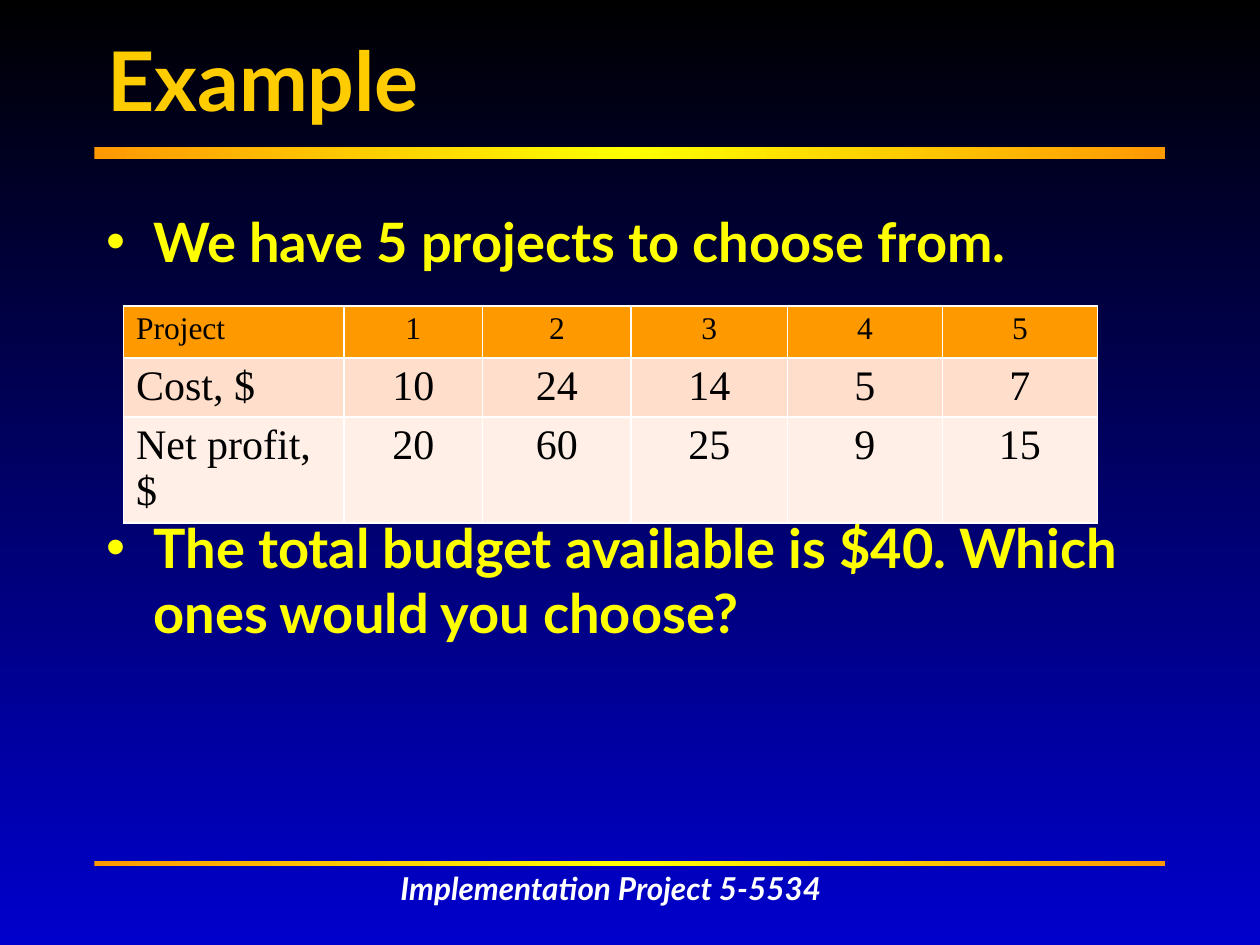
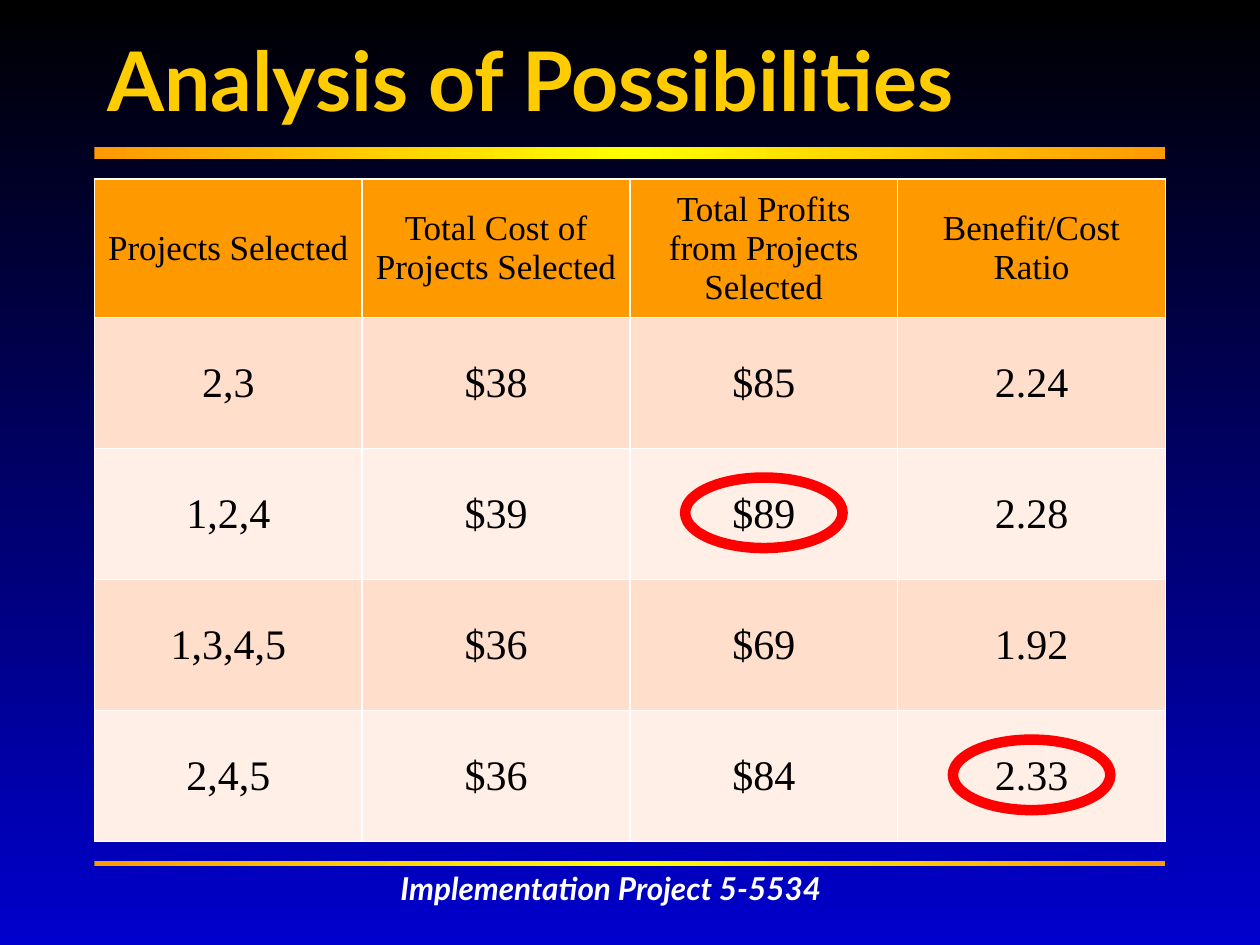
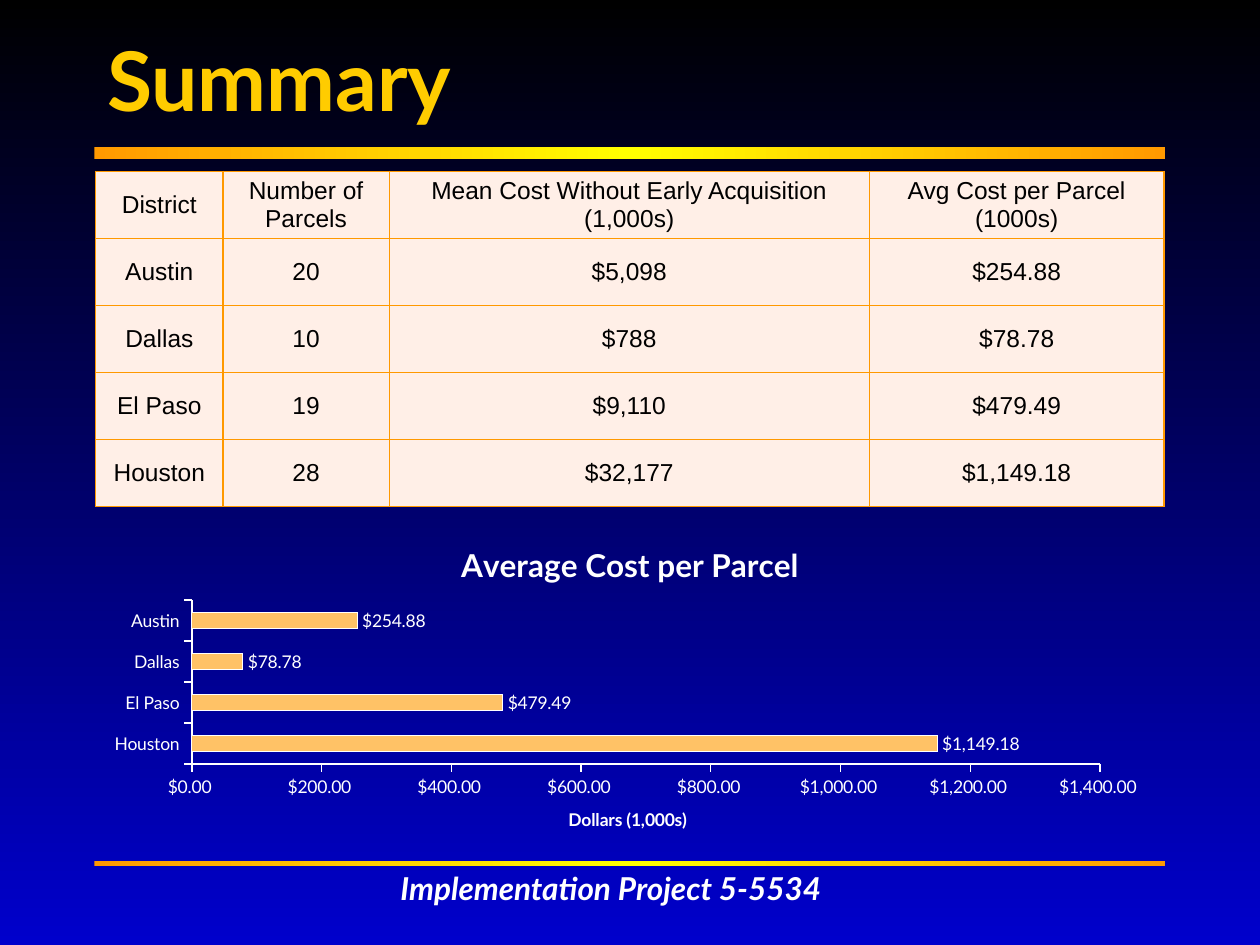
from copy import deepcopy
from dataclasses import dataclass

from lxml import etree
from pptx import Presentation
from pptx.chart.data import CategoryChartData
from pptx.dml.color import RGBColor
from pptx.enum.chart import XL_CHART_TYPE, XL_LABEL_POSITION, XL_TICK_MARK
from pptx.enum.shapes import MSO_SHAPE
from pptx.enum.text import MSO_ANCHOR, MSO_AUTO_SIZE, PP_ALIGN
from pptx.oxml.ns import qn
from pptx.util import Emu, Inches, Pt

BAR_CLUSTERED = XL_CHART_TYPE.BAR_CLUSTERED
OUTSIDE_END = XL_LABEL_POSITION.OUTSIDE_END
OUTSIDE = XL_TICK_MARK.OUTSIDE
RECTANGLE, OVAL = MSO_SHAPE.RECTANGLE, MSO_SHAPE.OVAL
TOP, MIDDLE = MSO_ANCHOR.TOP, MSO_ANCHOR.MIDDLE
NO_FIT = MSO_AUTO_SIZE.NONE
LEFT, CENTER = PP_ALIGN.LEFT, PP_ALIGN.CENTER

SLIDE_WIDTH, SLIDE_HEIGHT = Inches(10), Inches(7.5)
COLUMN, ROW = SLIDE_WIDTH / 100, SLIDE_HEIGHT / 75
TITLE_ONLY = 5

BLACK, NAVY, WHITE, RED = "000000", "0000CC", "FFFFFF", "FF0000"
ORANGE, YELLOW, GOLD, APRICOT = "FF9900", "FFFF00", "FFCC00", "FFC266"
PEACH, CREAM = "FFDECC", "FFEFE7"
SANS, SERIF, PLAIN = "Lato", "Times New Roman", "Arial"
DOLLARS = '"$"#,##0.00_);[Red]\\("$"#,##0.00\\)'


@dataclass(frozen=True)
class Box:
    """An area given in grid columns and rows."""
    left: float
    top: float
    width: float
    height: float

    def place(self) -> tuple:
        """Return left, top, width and height as lengths."""
        return (Emu(round(self.left * COLUMN)), Emu(round(self.top * ROW)),
                Emu(round(self.width * COLUMN)), Emu(round(self.height * ROW)))


@dataclass(frozen=True)
class TextStyle:
    """The look of a run of text."""
    size: float
    colour: str
    font: str = SANS
    bold: bool = False
    italic: bool = False


@dataclass(frozen=True)
class TableStyle:
    """The look of a table, with cell margins in grid units."""
    header: TextStyle
    body: TextStyle
    fills: tuple
    border: str
    first_align: PP_ALIGN = CENTER
    anchor: MSO_ANCHOR = MIDDLE
    side_margin: float = 1
    top_margin: float = 0.5
    bottom_margin: float = 0.5


TITLE_BOX = Box(7.5, 0, 85, 12.5)
FOOTER_BOX = Box(30.8, 68.5, 39.4, 4)
BANDS = (Box(7.5, 11.7, 85, 0.9), Box(7.5, 68.3, 85, 0.4))
BODY_BOX = Box(7.5, 16, 85, 48.2)
PROJECT_BOX = Box(9.8, 24.3, 77.3, 17.1)
ANALYSIS_BOX = Box(7.5, 14.2, 85, 52)
DISTRICT_BOX = Box(7.6, 13.6, 84.8, 26.6)
CHART_BOX = Box(7.6, 41.5, 84.8, 26.6)
PROJECT_HEIGHTS = (4.1, 4.7, 8.3)
RING_WIDTH, RING_HEIGHT, RING_DROP = 12.5, 5.6, 0.5

TITLE_STYLE = TextStyle(47, GOLD, bold=True)
BODY_STYLE = TextStyle(31, YELLOW, bold=True)
FOOTER_STYLE = TextStyle(18, WHITE, bold=True, italic=True)
CHART_TITLE_STYLE = TextStyle(18, WHITE, bold=True)
CHART_STYLE = TextStyle(10, WHITE)
AXIS_TITLE_STYLE = TextStyle(10, WHITE, bold=True)
SERIF_BODY = TextStyle(24, BLACK, SERIF)
DISTRICT_TEXT = TextStyle(14, BLACK, PLAIN)

BANDED = (ORANGE, PEACH, CREAM)
PROJECT_STYLE = TableStyle(TextStyle(18, BLACK, SERIF), SERIF_BODY, BANDED, WHITE,
                           first_align=LEFT, anchor=TOP, top_margin=0.4, bottom_margin=0)
ANALYSIS_STYLE = TableStyle(TextStyle(20, BLACK, SERIF), SERIF_BODY, BANDED, WHITE)
DISTRICT_STYLE = TableStyle(DISTRICT_TEXT, DISTRICT_TEXT, (CREAM,) * 3, ORANGE,
                            side_margin=0, top_margin=0, bottom_margin=0)

PROJECTS = (
    ("Project", "1", "2", "3", "4", "5"),
    ("Cost, $", "10", "24", "14", "5", "7"),
    ("Net profit, $", "20", "60", "25", "9", "15"),
)
POSSIBILITIES = (
    ("Projects Selected", "Total Cost of Projects Selected",
     "Total Profits from Projects Selected", "Benefit/Cost Ratio"),
    ("2,3", "$38", "$85", "2.24"),
    ("1,2,4", "$39", "$89", "2.28"),
    ("1,3,4,5", "$36", "$69", "1.92"),
    ("2,4,5", "$36", "$84", "2.33"),
)
BEST_CELLS = ((2, 2), (4, 3))
DISTRICT_HEADER = ("District", "Number of Parcels",
                   "Mean Cost Without Early Acquisition (1,000s)",
                   "Avg Cost per Parcel (1000s)")
DISTRICTS = (
    ("Austin", 20, 5098, 254.88),
    ("Dallas", 10, 788, 78.78),
    ("El Paso", 19, 9110, 479.49),
    ("Houston", 28, 32177, 1149.18),
)


def rgb(colour: str) -> RGBColor:
    """Turn a hex string into a colour."""
    return RGBColor.from_string(colour)


def style_font(font, style: TextStyle) -> None:
    """Apply a text style to a font."""
    font.name, font.size = style.font, Pt(style.size)
    font.bold, font.italic = style.bold, style.italic
    font.color.rgb = rgb(style.colour)


def add_span(para, text: str, style: TextStyle, align: PP_ALIGN = LEFT) -> None:
    """Add one styled run to a paragraph."""
    para.alignment = align
    span = para.add_run()
    span.text = text
    style_font(span.font, style)


def paint_gradient(fill, element, colours: tuple, angle: float) -> None:
    """Fill with evenly spaced gradient colours."""
    fill.gradient()
    fill.gradient_angle = angle
    stop_list = next(element.iter(qn("a:gsLst")))
    while len(stop_list) < len(colours):
        stop_list.append(deepcopy(stop_list[-1]))
    for index, (stop, colour) in enumerate(zip(fill.gradient_stops, colours)):
        stop.position = index / (len(colours) - 1)
        stop.color.rgb = rgb(colour)


def add_slide(deck, title: str):
    """Add a slide with the shared title, bands and footer."""
    page = deck.slides.add_slide(deck.slide_layouts[TITLE_ONLY])
    heading = page.shapes.title
    heading.left, heading.top, heading.width, heading.height = TITLE_BOX.place()
    heading.text_frame.auto_size = NO_FIT
    heading.text_frame.vertical_anchor = MIDDLE
    add_span(heading.text_frame.paragraphs[0], title, TITLE_STYLE)
    for area in BANDS:
        band = page.shapes.add_shape(RECTANGLE, *area.place())
        band.shadow.inherit = False
        band.line.fill.background()
        paint_gradient(band.fill, band.element, (ORANGE, YELLOW, ORANGE), 0)
    footer = page.shapes.add_textbox(*FOOTER_BOX.place()).text_frame
    footer.word_wrap = True
    add_span(footer.paragraphs[0], "Implementation Project 5-5534", FOOTER_STYLE)
    return page


def add_bullets(page, area: Box, texts: tuple, gap: float) -> None:
    """Add bulleted paragraphs with a gap in points between them."""
    frame = page.shapes.add_textbox(*area.place()).text_frame
    frame.word_wrap = True
    for index, text in enumerate(texts):
        para = frame.add_paragraph() if index else frame.paragraphs[0]
        properties = para._p.get_or_add_pPr()
        properties.set("marL", str(Inches(0.37)))
        properties.set("indent", str(-Inches(0.37)))
        etree.SubElement(properties, qn("a:buFont"), typeface="Arial")
        etree.SubElement(properties, qn("a:buChar"), char="•")
        if index:
            para.space_before = Pt(gap)
        add_span(para, text, BODY_STYLE)


def add_borders(cell, colour: str) -> None:
    """Draw the four borders of a cell."""
    properties = cell._tc.get_or_add_tcPr()
    for side in "LRTB":
        line = etree.SubElement(properties, qn(f"a:ln{side}"), w=str(Pt(1)))
        solid = etree.SubElement(line, qn("a:solidFill"))
        etree.SubElement(solid, qn("a:srgbClr"), val=colour)


def add_table(page, area: Box, rows: tuple, widths: tuple, style: TableStyle,
              heights: tuple = ()) -> None:
    """Add a table with given column widths, and equal rows unless heights are given."""
    table = page.shapes.add_table(len(rows), len(widths), *area.place()).table
    table.first_row = table.horz_banding = False
    for column, width in zip(table.columns, widths):
        column.width = Emu(round(width * COLUMN))
    for row, height in zip(table.rows, heights):
        row.height = Emu(round(height * ROW))
    for r, texts in enumerate(rows):
        for c, text in enumerate(texts):
            cell = table.cell(r, c)
            add_borders(cell, style.border)
            cell.fill.solid()
            cell.fill.fore_color.rgb = rgb(style.fills[2 - r % 2 if r else 0])
            cell.vertical_anchor = style.anchor
            cell.margin_left = cell.margin_right = Emu(round(style.side_margin * COLUMN))
            cell.margin_top = Emu(round(style.top_margin * ROW))
            cell.margin_bottom = Emu(round(style.bottom_margin * ROW))
            add_span(cell.text_frame.paragraphs[0], text,
                     style.body if r else style.header,
                     CENTER if c else style.first_align)


def add_ring(page, area: Box, row: int, column: int) -> None:
    """Ring one cell of the table of possibilities."""
    cell_width = area.width / len(POSSIBILITIES[0])
    cell_height = area.height / len(POSSIBILITIES)
    ring_box = Box(area.left + (column + 0.5) * cell_width - RING_WIDTH / 2,
                   area.top + (row + 0.5) * cell_height - RING_HEIGHT / 2 + RING_DROP,
                   RING_WIDTH, RING_HEIGHT)
    ring = page.shapes.add_shape(OVAL, *ring_box.place())
    ring.shadow.inherit = False
    ring.fill.background()
    ring.line.color.rgb = rgb(RED)
    ring.line.width = Pt(6)


def set_plot_layout(chart, **shares: float) -> None:
    """Fix the inner plot area as shares of the chart."""
    plot_area = chart._chartSpace.chart.plotArea
    for old in plot_area.findall(qn("c:layout")):
        plot_area.remove(old)
    layout = etree.Element(qn("c:layout"))
    plot_area.insert(0, layout)
    manual = etree.SubElement(layout, qn("c:manualLayout"))
    settings = {"layoutTarget": "inner", "xMode": "edge", "yMode": "edge", **shares}
    for name, value in settings.items():
        etree.SubElement(manual, qn(f"c:{name}"), val=str(value))


def add_cost_chart(page) -> None:
    """Add the bar chart of average cost per parcel."""
    data = CategoryChartData(number_format=DOLLARS)
    data.categories = [district[0] for district in reversed(DISTRICTS)]
    data.add_series("Series 1", [district[3] for district in reversed(DISTRICTS)])
    chart = page.shapes.add_chart(BAR_CLUSTERED, *CHART_BOX.place(), data).chart
    style_font(chart.font, CHART_STYLE)
    chart.has_legend = False
    add_span(chart.chart_title.text_frame.paragraphs[0], "Average Cost per Parcel",
             CHART_TITLE_STYLE, CENTER)
    set_plot_layout(chart, x=0.09, y=0.23, w=0.85, h=0.49)

    values = chart.value_axis
    for axis in (chart.category_axis, values):
        axis.has_major_gridlines = False
        axis.major_tick_mark = OUTSIDE
        axis.format.line.color.rgb = rgb(WHITE)
    values.minimum_scale, values.maximum_scale, values.major_unit = 0, 1400, 200
    values.tick_labels.number_format = DOLLARS
    values.tick_labels.number_format_is_linked = False
    add_span(values.axis_title.text_frame.paragraphs[0], "Dollars (1,000s)",
             AXIS_TITLE_STYLE, CENTER)

    plot = chart.plots[0]
    plot.gap_width, plot.vary_by_categories = 150, False
    plot.has_data_labels = True
    labels = plot.data_labels
    labels.show_value, labels.position = True, OUTSIDE_END
    labels.number_format, labels.number_format_is_linked = DOLLARS, False
    style_font(labels.font, CHART_STYLE)
    bars = plot.series[0].format
    bars.fill.solid()
    bars.fill.fore_color.rgb = rgb(APRICOT)
    bars.line.color.rgb = rgb(WHITE)


def build_example(deck) -> None:
    """Build the slide that poses the budget question."""
    page = add_slide(deck, "Example")
    add_bullets(page, BODY_BOX,
                ("We have 5 projects to choose from.",
                 "The total budget available is $40. Which ones would you choose?"), 138)
    add_table(page, PROJECT_BOX, PROJECTS, (17.5, 11, 11.8, 12.4, 12.3, 12.3),
              PROJECT_STYLE, PROJECT_HEIGHTS)


def build_analysis(deck) -> None:
    """Build the slide that compares the possible selections."""
    page = add_slide(deck, "Analysis of Possibilities")
    widths = (ANALYSIS_BOX.width / 4,) * 4
    add_table(page, ANALYSIS_BOX, POSSIBILITIES, widths, ANALYSIS_STYLE)
    for row, column in BEST_CELLS:
        add_ring(page, ANALYSIS_BOX, row, column)


def build_summary(deck) -> None:
    """Build the slide that sums up the districts."""
    page = add_slide(deck, "Summary")
    add_cost_chart(page)
    rows = (DISTRICT_HEADER, *(
        (name, str(parcels), f"${mean:,}", f"${average:,.2f}")
        for name, parcels, mean, average in DISTRICTS))
    add_table(page, DISTRICT_BOX, rows, (10.1, 13.2, 38.1, 23.4), DISTRICT_STYLE)


def main() -> None:
    """Build and save the deck."""
    deck = Presentation()
    deck.slide_width, deck.slide_height = SLIDE_WIDTH, SLIDE_HEIGHT
    master = deck.slide_master
    paint_gradient(master.background.fill, master.element, (BLACK, NAVY), 270)
    build_example(deck)
    build_analysis(deck)
    build_summary(deck)
    deck.save("out.pptx")


if __name__ == "__main__":
    main()
